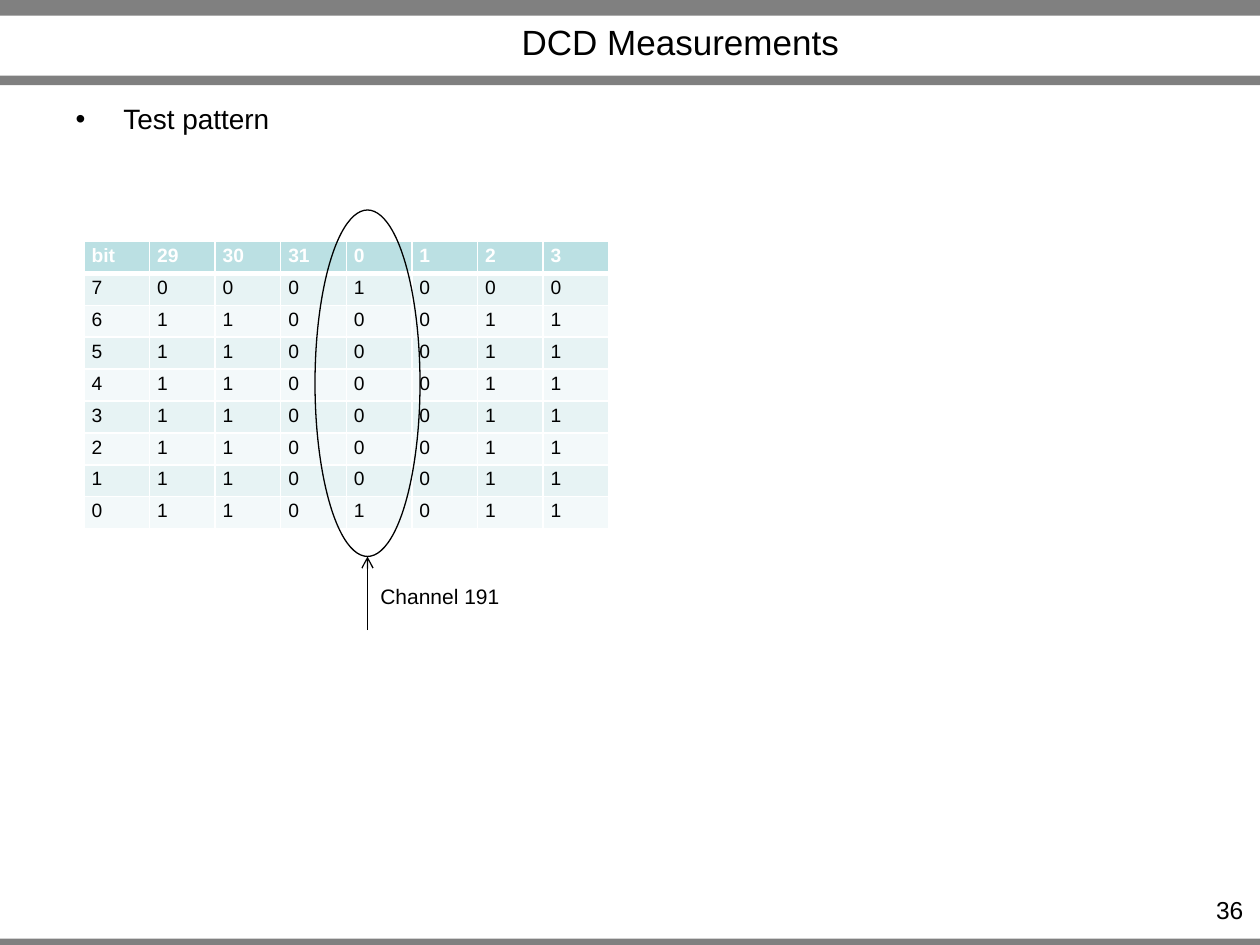
from dataclasses import dataclass

from lxml import etree
from pptx import Presentation
from pptx.dml.color import RGBColor
from pptx.enum.shapes import MSO_CONNECTOR, MSO_SHAPE
from pptx.enum.text import MSO_ANCHOR, MSO_AUTO_SIZE, PP_ALIGN
from pptx.oxml import parse_xml
from pptx.oxml.ns import nsdecls, qn
from pptx.util import Inches, Pt

RECT, OVAL = MSO_SHAPE.RECTANGLE, MSO_SHAPE.OVAL
STRAIGHT = MSO_CONNECTOR.STRAIGHT
LEFT, CENTER, RIGHT = PP_ALIGN.LEFT, PP_ALIGN.CENTER, PP_ALIGN.RIGHT
TOP, MIDDLE = MSO_ANCHOR.TOP, MSO_ANCHOR.MIDDLE
NO_FIT = MSO_AUTO_SIZE.NONE

FONT = "Arial"
COLORS = {
    "text": "000000",
    "white": "FFFFFF",
    "bar": "808080",
    "header": "BBE0E3",
    "odd": "E7F3F4",
    "even": "F3F9FA",
}
COLS, ROWS = 120, 90
WIDTH, HEIGHT = Inches(10), Inches(7.5)
BITS = """bit 29 30 31 0 1 2 3
7 0 0 0 1 0 0 0
6 1 1 0 0 0 1 1
5 1 1 0 0 0 1 1
4 1 1 0 0 0 1 1
3 1 1 0 0 0 1 1
2 1 1 0 0 0 1 1
1 1 1 0 0 0 1 1
0 1 1 0 1 0 1 1"""


@dataclass(frozen=True)
class Box:
    col: float
    row: float
    cols: float
    rows: float

    def emu(self) -> tuple:
        return x(self.col), y(self.row), x(self.cols), y(self.rows)


BARS = [Box(0, 89.4, COLS, 0.6), Box(0, 0, COLS, 1.5), Box(0, 7.2, COLS, 0.9)]
TITLE = Box(15.6, 1.7, 98.4, 4.5)
BODY = Box(6, 9.1, 108, 13)
NUMBER = Box(109.2, 84.7, 10.4, 2.9)
TABLE = Box(8, 23, 50, 27.36)
RING = Box(30, 20, 10, 33)
LABEL = Box(35, 55, 13.8, 3.6)


def x(cols: float) -> int:
    return round(WIDTH * cols / COLS)


def y(rows: float) -> int:
    return round(HEIGHT * rows / ROWS)


def rgb(name: str) -> RGBColor:
    return RGBColor.from_string(COLORS[name])


def style(p, size: float, align, color: str = "text", bold: bool = False) -> None:
    p.alignment = align
    p.font.name, p.font.size, p.font.bold = FONT, Pt(size), bold
    p.font.color.rgb = rgb(color)


def write(sp, box: Box, text: str, size: float, align, anchor=TOP, wrap: bool = True):
    sp.left, sp.top, sp.width, sp.height = box.emu()
    tf = sp.text_frame
    tf.text = text
    tf.word_wrap, tf.auto_size, tf.vertical_anchor = wrap, NO_FIT, anchor
    return tf.paragraphs[0]


def add_bar(s, box: Box) -> None:
    sp = s.shapes.add_shape(RECT, *box.emu())
    sp.shadow.inherit = False
    sp.fill.solid()
    sp.fill.fore_color.rgb = rgb("bar")
    sp.line.fill.background()


def add_label(s, box: Box, text: str, size: float, align, wrap: bool = True) -> None:
    sp = s.shapes.add_textbox(*box.emu())
    style(write(sp, box, text, size, align, wrap=wrap), size, align)


def add_borders(cell, top: float, bottom: float) -> None:
    tc_pr = cell._tc.get_or_add_tcPr()
    for side, width in (("L", 1), ("R", 1), ("T", top), ("B", bottom)):
        tc_pr.append(parse_xml(
            f'<a:ln{side} {nsdecls("a")} w="{Pt(width)}"><a:solidFill>'
            f'<a:srgbClr val="{COLORS["white"]}"/></a:solidFill></a:ln{side}>'))


def add_bit_table(s, box: Box, rows: list) -> None:
    table = s.shapes.add_table(len(rows), len(rows[0]), *box.emu()).table
    for column in table.columns:
        column.width = x(box.cols / len(rows[0]))
    for i, values in enumerate(rows):
        table.rows[i].height = y(box.rows / len(rows))
        fill = "header" if i == 0 else "odd" if i % 2 else "even"
        for j, value in enumerate(values):
            cell = table.cell(i, j)
            cell.margin_left = cell.margin_right = Inches(0.06)
            cell.margin_top = cell.margin_bottom = Inches(0.03)
            add_borders(cell, 3 if i == 1 else 1, 3 if i == 0 else 1)
            cell.fill.solid()
            cell.fill.fore_color.rgb = rgb(fill)
            cell.text = value
            style(cell.text_frame.paragraphs[0], 11, LEFT,
                  "text" if i else "white", i == 0)


def add_arrow(s, col: float, start: float, end: float) -> None:
    line = s.shapes.add_connector(STRAIGHT, x(col), y(start), x(col), y(end))
    line.line.color.rgb = rgb("text")
    line.line.width = Pt(0.75)
    etree.SubElement(line.line._get_or_add_ln(), qn("a:tailEnd"), type="arrow")
    etree.SubElement(line._element.spPr, qn("a:effectLst"))


def add_ring(s, box: Box) -> None:
    sp = s.shapes.add_shape(OVAL, *box.emu())
    sp.shadow.inherit = False
    sp.fill.background()
    sp.line.color.rgb = rgb("text")
    sp.line.width = Pt(0.75)


def main() -> None:
    prs = Presentation()
    prs.slide_width, prs.slide_height = WIDTH, HEIGHT
    s = prs.slides.add_slide(prs.slide_layouts[1])
    for bar in BARS:
        add_bar(s, bar)

    p = write(s.shapes.title, TITLE, "DCD Measurements", 20, CENTER, MIDDLE)
    style(p, 20, CENTER)

    p = write(s.placeholders[1], BODY, "Test pattern", 16, LEFT)
    p.space_before = Pt(0)
    p_pr = p._p.get_or_add_pPr()
    p_pr.set("marL", str(Inches(0.38)))
    p_pr.set("indent", str(-Inches(0.38)))
    etree.SubElement(p_pr, qn("a:buChar"), char="•")
    style(p, 16, LEFT)

    add_label(s, NUMBER, "36", 14, RIGHT)
    add_bit_table(s, TABLE, [line.split() for line in BITS.splitlines()])
    center = RING.col + RING.cols / 2
    add_arrow(s, center, 60, RING.row + RING.rows)
    add_label(s, LABEL, "Channel 191", 12, CENTER, wrap=False)
    add_ring(s, RING)
    prs.save("out.pptx")


if __name__ == "__main__":
    main()
